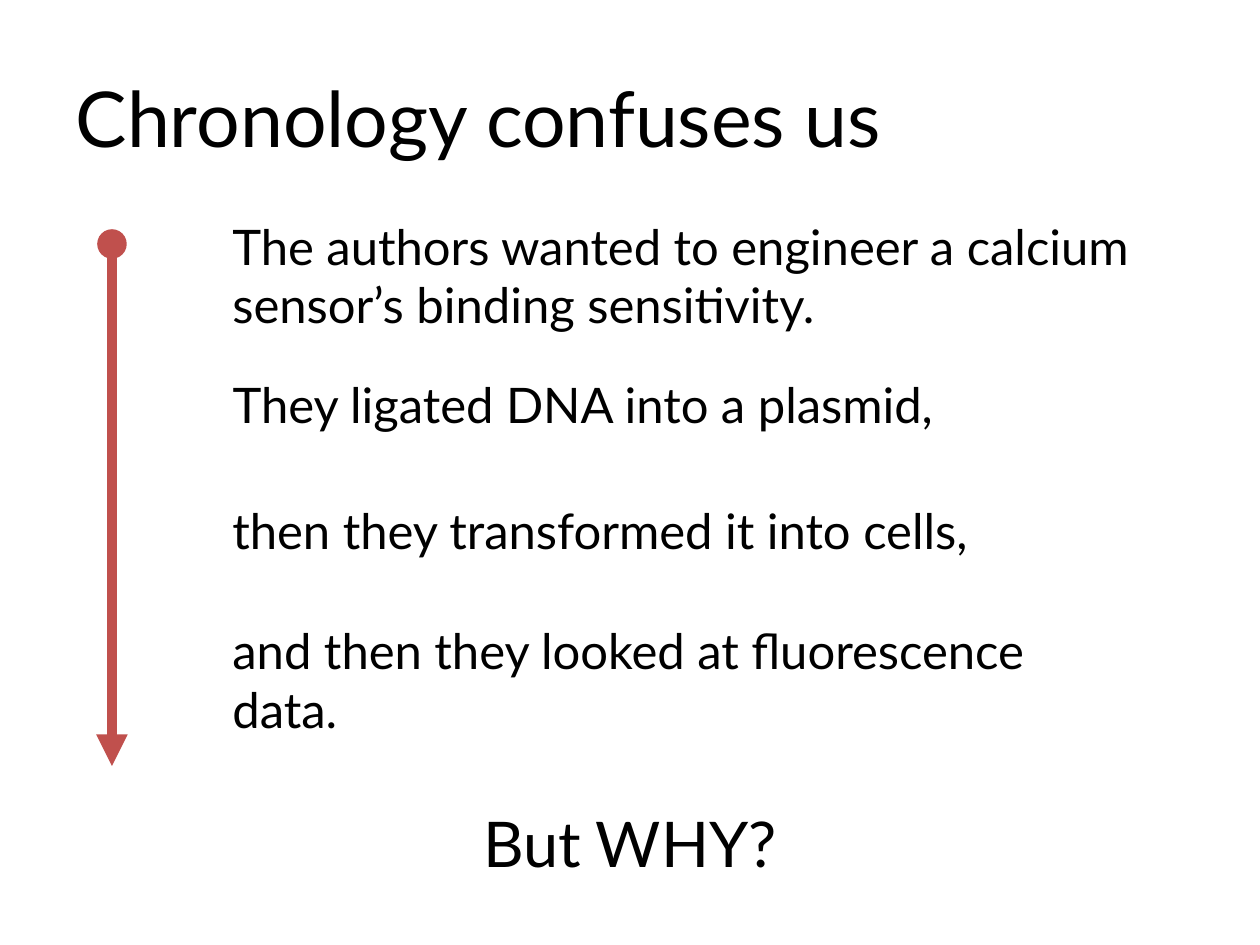
from lxml import etree
from pptx import Presentation
from pptx.dml.color import RGBColor
from pptx.enum.shapes import MSO_CONNECTOR, MSO_SHAPE
from pptx.enum.text import MSO_ANCHOR, MSO_AUTO_SIZE, PP_ALIGN
from pptx.oxml.ns import qn
from pptx.util import Emu, Pt

LINE = MSO_CONNECTOR.STRAIGHT
OVAL = MSO_SHAPE.OVAL
TOP, MIDDLE = MSO_ANCHOR.TOP, MSO_ANCHOR.MIDDLE
LEFT, CENTER = PP_ALIGN.LEFT, PP_ALIGN.CENTER
NO_FIT = MSO_AUTO_SIZE.NONE
PX = 914400 / 126
RED = RGBColor.from_string("C0504D")


def px(*sizes):
    return [Emu(round(size * PX)) for size in sizes]


def write(words, box, shape=None, size=28, align=LEFT, anchor=TOP):
    """Put words in a placeholder, or in a new text box, at box."""
    shape = shape or slide.shapes.add_textbox(*px(*box))
    shape.left, shape.top, shape.width, shape.height = px(*box)
    frame = shape.text_frame
    frame.word_wrap = True
    frame.auto_size = NO_FIT
    frame.vertical_anchor = anchor
    para = frame.paragraphs[0]
    para.alignment = align
    para.space_before = Pt(0)
    run = para.add_run()
    run.text = words
    run.font.size = Pt(size)
    run.font.name = "Lato"
    run.font.color.rgb = RGBColor.from_string("000000")
    return para


deck = Presentation()
deck.slide_width, deck.slide_height = px(1260, 945)
slide = deck.slides.add_slide(deck.slide_layouts[1])
title, body = slide.placeholders

write("Chronology confuses us", (63, 38, 1134, 158), shape=title,
      size=44, anchor=MIDDLE)

# Steps of the story, with the second one in the body placeholder
write("The authors wanted to engineer a calcium sensor’s binding sensitivity.",
      (220, 210, 955, 115))
step = write("They ligated DNA into a plasmid,", (220, 368, 829, 105),
             shape=body)
props = step._p.get_or_add_pPr()
props.set("marL", "0")
props.set("indent", "0")
etree.SubElement(props, qn("a:buNone"))
write("then they transformed it into cells,", (220, 494, 829, 72))
write("and then they looked at fluorescence data.", (220, 614, 903, 131))
write("But WHY?", (336, 798, 588, 89), size=36, align=CENTER)

# Timeline: arrow down from a dot
arrow = slide.shapes.add_connector(LINE, *px(112, 242, 112, 766))
arrow.line.color.rgb = RED
arrow.line.width = Pt(6)
etree.SubElement(arrow.line._get_or_add_ln(), qn("a:tailEnd"), type="triangle")
etree.SubElement(arrow._element.spPr, qn("a:effectLst"))

dot = slide.shapes.add_shape(OVAL, *px(99, 231, 26, 26))
dot.shadow.inherit = False
dot.fill.solid()
dot.fill.fore_color.rgb = RED
dot.line.color.rgb = RED
dot.line.width = Pt(2)

deck.save("out.pptx")
